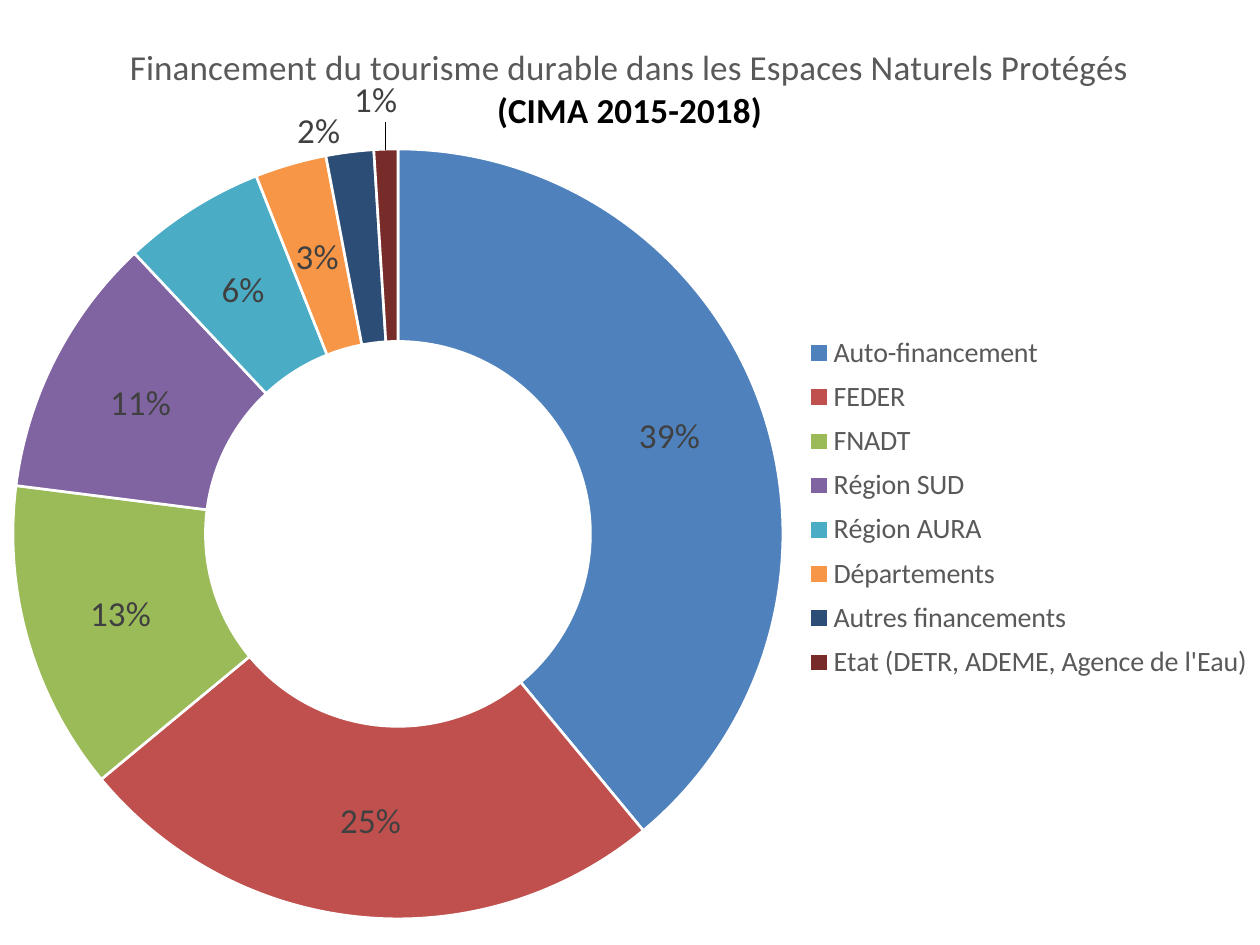
from lxml import etree
from pptx import Presentation
from pptx.chart.data import CategoryChartData
from pptx.dml.color import RGBColor
from pptx.enum.chart import XL_CHART_TYPE, XL_LEGEND_POSITION
from pptx.enum.text import PP_ALIGN
from pptx.oxml.ns import qn
from pptx.util import Emu, Pt

RING = XL_CHART_TYPE.DOUGHNUT
RIGHT = XL_LEGEND_POSITION.RIGHT
CENTER = PP_ALIGN.CENTER
SCALE = 914400 // 126
FACE = "Calibri"
COLORS = {
    "title": "595959", "label": "404040", "black": "000000", "white": "FFFFFF",
    "blue": "4F81BD", "red": "C0504D", "green": "9BBB59", "purple": "8064A2",
    "teal": "4BACC6", "orange": "F79646", "navy": "2C4D75", "maroon": "772C2A",
}
SHARES = [
    ("Auto-financement", 39, "blue"),
    ("FEDER", 25, "red"),
    ("FNADT", 13, "green"),
    ("Région SUD", 11, "purple"),
    ("Région AURA", 6, "teal"),
    ("Départements", 3, "orange"),
    ("Autres financements", 2, "navy"),
    ("Etat (DETR, ADEME, Agence de l'Eau)", 1, "maroon"),
]
MOVED = {6: (-43, -117), 7: (-13, -145)}


def px(num):
    return Emu(num * SCALE)


def tint(name):
    return RGBColor.from_string(COLORS[name])


def style(font, size, color, bold=False):
    font.name = FACE
    font.size = Pt(size)
    font.bold = bold
    font.color.rgb = tint(color)


def write(para, text, **form):
    para.alignment = CENTER
    run = para.add_run()
    run.text = text
    style(run.font, **form)


class Deck:
    def __init__(self, wide, high):
        self.file = Presentation()
        self.file.slide_width = px(wide)
        self.file.slide_height = px(high)
        self.slide = self.file.slides.add_slide(self.file.slide_layouts[6])

    def ring(self, shares, left, top, wide, high):
        data = CategoryChartData()
        data.categories = [name for name, _, _ in shares]
        data.add_series("Financement", [share for _, share, _ in shares])
        frame = self.slide.shapes.add_chart(
            RING, px(left), px(top), px(wide), px(high), data)
        self.chart = frame.chart
        self.area = (left, top, wide, high)
        style(self.chart.font, 10, "black")
        plot = self.chart.plots[0]
        plot.vary_by_categories = True
        for i, (_, _, color) in enumerate(shares):
            form = plot.series[0].points[i].format
            form.fill.solid()
            form.fill.fore_color.rgb = tint(color)
            form.line.color.rgb = tint("white")
            form.line.width = Pt(1.5)

    def place(self, node, index, x, y, size=None, kind="edge", inner=False):
        left, top, wide, high = self.area
        if kind == "edge":
            x, y = x - left, y - top
        for old in node.findall(qn("c:layout")):
            node.remove(old)
        layout = etree.Element(qn("c:layout"))
        node.insert(index, layout)
        manual = etree.SubElement(layout, qn("c:manualLayout"))
        items = [("layoutTarget", "inner")] if inner else []
        items += [("xMode", kind), ("yMode", kind)]
        items += [("x", x / wide), ("y", y / high)]
        if size:
            items += [("w", size[0] / wide), ("h", size[1] / high)]
        for tag, value in items:
            etree.SubElement(manual, qn("c:" + tag)).set("val", str(value))

    def find(self, query):
        return self.chart.element.xpath(query)[0]

    def title(self, lines, x, y):
        frame = self.chart.chart_title.text_frame
        for i, (text, form) in enumerate(lines):
            para = frame.add_paragraph() if i else frame.paragraphs[0]
            write(para, text, **form)
        self.chart.chart_title.include_in_layout = False
        self.place(self.find("c:chart/c:title"), 1, x, y)

    def legend(self, x, y, size):
        self.chart.has_legend = True
        legend = self.chart.legend
        legend.position = RIGHT
        legend.include_in_layout = False
        style(legend.font, 16, "title")
        self.place(self.find("c:chart/c:legend"), 1, x, y, size)

    def labels(self, moved):
        series = self.chart.plots[0].series[0]
        labels = series.data_labels
        labels.show_value = False
        labels.show_percentage = True
        labels.number_format = "0%"
        labels.number_format_is_linked = False
        style(labels.font, 20, "label")
        for i, (x, y) in moved.items():
            style(series.points[i].data_label.font, 20, "label")
            node = self.find(f".//c:ser/c:dLbls/c:dLbl[c:idx/@val='{i}']")
            node.find(qn("c:showVal")).set("val", "0")
            node.find(qn("c:showPercent")).set("val", "1")
            self.place(node, 1, x, y, kind="factor")


def main():
    deck = Deck(1260, 945)
    deck.ring(SHARES, -19, 6, 1297, 932)
    deck.place(deck.find("c:chart/c:plotArea"), 0, 13, 149, (770, 770), inner=True)
    deck.title([
        ("Financement du tourisme durable dans les Espaces Naturels Protégés",
         {"size": 20, "color": "title"}),
        ("(CIMA 2015-2018)", {"size": 20, "color": "black", "bold": True}),
    ], 126, 40)
    deck.legend(802, 326, (454, 364))
    deck.labels(MOVED)
    deck.file.save("out.pptx")


if __name__ == "__main__":
    main()
